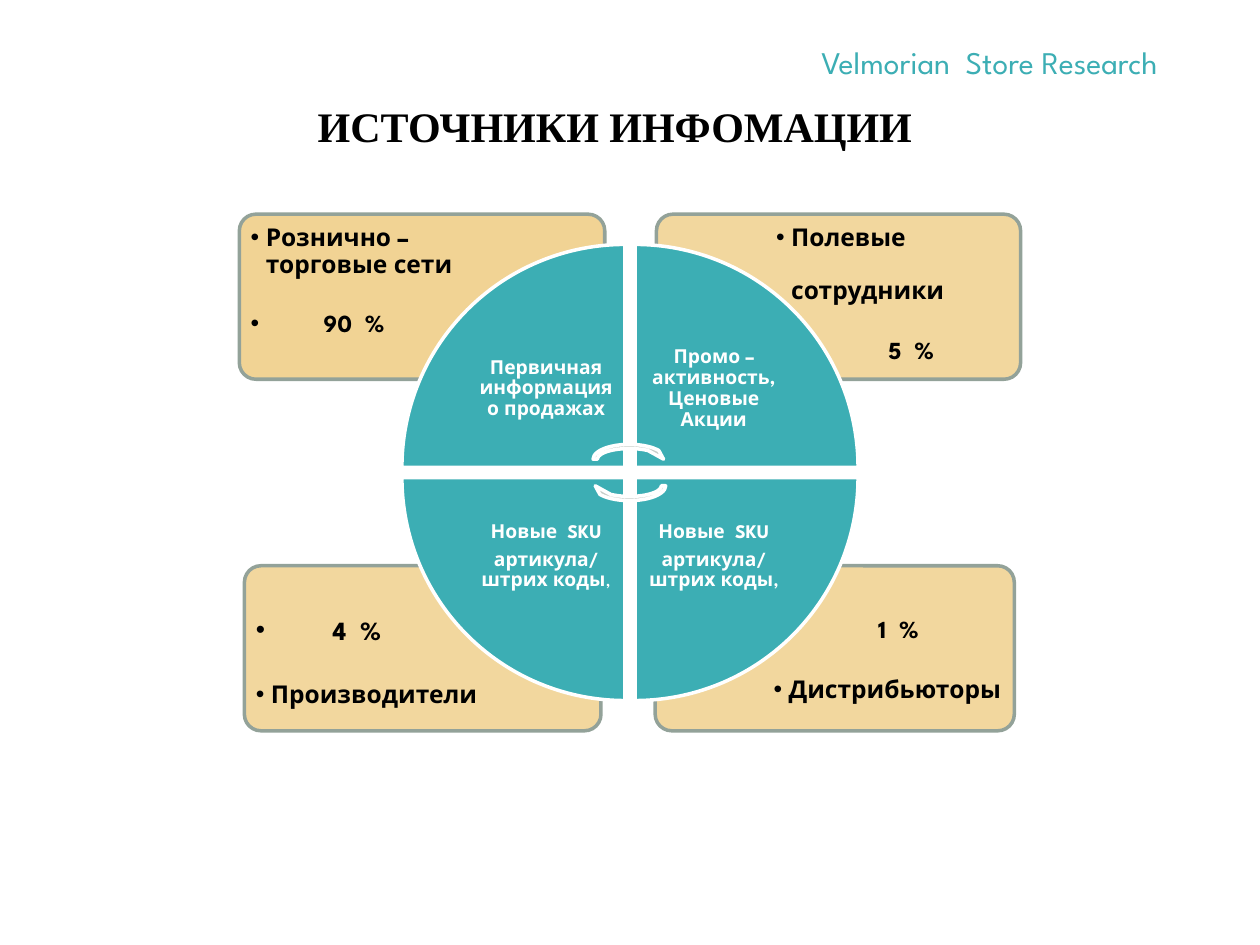
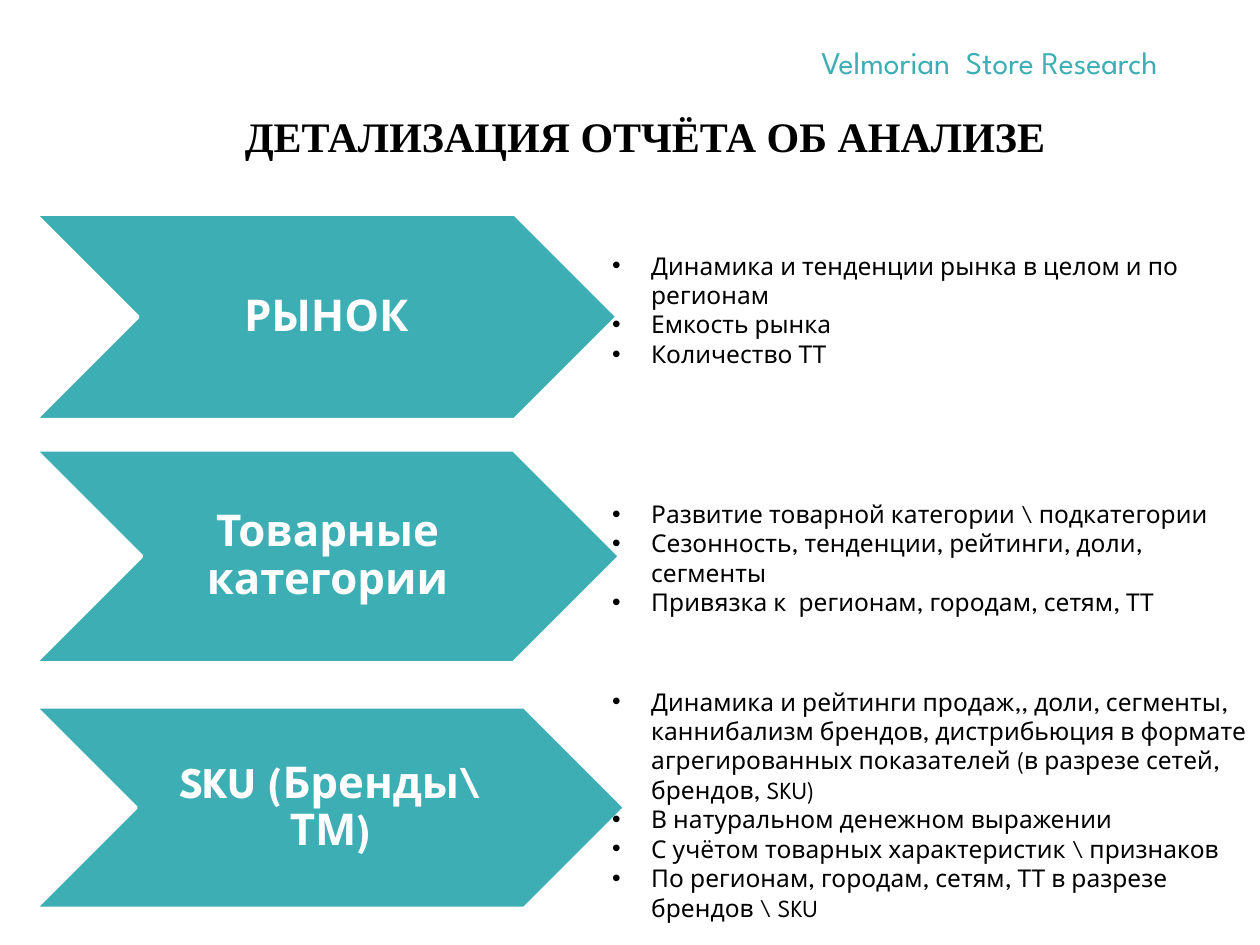
from dataclasses import dataclass
from lxml.etree import SubElement as Sub
from pptx import Presentation
from pptx.dml.color import RGBColor as Rgb
from pptx.enum.shapes import MSO_SHAPE as Kind
from pptx.enum.text import MSO_ANCHOR as Anchor, PP_ALIGN as Align
from pptx.oxml.ns import qn
from pptx.util import Inches, Pt


@dataclass(frozen=True)
class Theme:
    teal: str = "3CAEB4"
    sand: str = "F1D394"
    edge: str = "93A299"
    gray: str = "C8CECA"
    white: str = "FFFFFF"
    black: str = "000000"
    serif: str = "Times New Roman"
    sans: str = "League Spartan"
    dots: str = "Arial"
    title: int = 24
    brand: int = 18
    big: int = 25
    share: int = 15
    body: int = 14
    wedge: int = 11
    small: int = 10


T = Theme()
BRAND = "Velmorian  Store Research"
HANG = 0.12

CARDS = [
    dict(box=(5.2, 4.49, 2.85, 1.31), text=(6.08, 4.84, 1.94, 0.93), alpha=90, lines=[
        ("1  %", T.body, 0.83, False, 0),
        ("Дистрибьюторы", T.body, HANG, True, 19)]),
    dict(box=(1.94, 4.49, 2.83, 1.31), text=(1.97, 4.84, 1.92, 0.93), alpha=90, lines=[
        ("4  %", T.share, 0.61, True, 0),
        ("Производители", T.body, HANG, True, 21)]),
    dict(box=(5.21, 1.7, 2.89, 1.31), text=(6.1, 1.73, 1.97, 0.93), alpha=90, lines=[
        ("Полевые", T.body, HANG, True, 0),
        ("сотрудники", T.body, HANG, False, 15),
        ("5  %", T.body, 0.89, False, 19)]),
    dict(box=(1.9, 1.7, 2.9, 1.31), text=(1.93, 1.73, 1.97, 0.93), alpha=100, lines=[
        ("Рознично – торговые сети", T.body, HANG, True, 0),
        ("90  %", T.body, 0.58, True, 19)]),
]

GOODS = "артикула/ штрих коды"
WEDGES = [
    [[("Первичная информация о продажах", T.wedge, True)]],
    [[("Промо – активность, Ценовые Акции", T.wedge, True)]],
    [[("Новые  SKU", T.wedge, True)], [(GOODS, T.wedge, True), (",", T.small, True)]],
    [[("Новые  SKU", T.wedge, True)], [(GOODS, T.wedge, True), (",", T.wedge, False)]],
]

LEVELS = [
    ("РЫНОК", (1.7, 4.62, 1.63), (1.94, 5.24, 1.04), [
        "Динамика и тенденции рынка в целом и по регионам",
        "Емкость рынка",
        "Количество ТТ"]),
    ("Товарные категории", (3.57, 4.64, 1.69), (3.91, 5.19, 1.04), [
        "Развитие товарной категории \\ подкатегории",
        "Сезонность, тенденции, рейтинги, доли, сегменты",
        "Привязка к  регионам, городам, сетям, ТТ"]),
    ("SKU (Бренды\\ ТМ)", (5.61, 4.68, 1.6), (5.4, 5.35, 1.99), [
        "Динамика и рейтинги продаж,, доли, сегменты, каннибализм брендов, "
        "дистрибьюция в формате агрегированных показателей (в разрезе сетей, брендов, SKU)",
        "В натуральном денежном выражении",
        "С учётом товарных характеристик \\ признаков",
        "По регионам, городам, сетям, ТТ в разрезе брендов \\ SKU"]),
]


def style(run, size, color, bold=False, face=T.sans):
    font = run.font
    font.name, font.size, font.bold = face, Pt(size), bold
    font.color.rgb = Rgb.from_string(color)


def inset(frame, side, top):
    frame.word_wrap = True
    frame.margin_left = frame.margin_right = Inches(side)
    frame.margin_top = frame.margin_bottom = Inches(top)


def textbox(slide, box, side=0.1, top=0.05):
    frame = slide.shapes.add_textbox(*map(Inches, box)).text_frame
    inset(frame, side, top)
    return frame


def shape(slide, kind, box, fill, line=T.white, turn=0, alpha=100):
    item = slide.shapes.add_shape(kind, *map(Inches, box))
    item.shadow.inherit = False
    item.rotation = turn
    item.fill.solid()
    item.fill.fore_color.rgb = Rgb.from_string(fill)
    if alpha < 100:
        tint = item.fill._xPr.find(qn("a:solidFill"))[0]
        Sub(tint, qn("a:alpha")).set("val", str(alpha * 1000))
    item.line.color.rgb = Rgb.from_string(line)
    item.line.width = Pt(2)
    return item


def paras(frame, count):
    frame.text = "\n" * (count - 1)
    return frame.paragraphs


def indent(para, left, dot):
    props = para._p.get_or_add_pPr()
    props.set("marL", str(Inches(left)))
    props.set("indent", str(-Inches(left) if dot else 0))
    if dot:
        Sub(props, qn("a:buFont")).set("typeface", T.dots)
        Sub(props, qn("a:buChar")).set("char", "•")


def start(deck, text, box):
    slide = deck.slides.add_slide(deck.slide_layouts[5])
    title = slide.shapes.title
    title.left, title.top, title.width, title.height = map(Inches, box)
    frame = title.text_frame
    frame.text = text
    frame.vertical_anchor = Anchor.MIDDLE
    para = frame.paragraphs[0]
    para.alignment = Align.CENTER
    style(para.runs[0], T.title, T.black, True, T.serif)
    brand = textbox(slide, (6.42, 0.29, 3.46, 0.4))
    brand.text = BRAND
    style(brand.paragraphs[0].runs[0], T.brand, T.teal)
    return slide


def card(slide, box, text, alpha, lines):
    back = shape(slide, Kind.ROUNDED_RECTANGLE, box, T.sand, T.edge, alpha=alpha)
    back.adjustments[0] = 0.1
    frame = textbox(slide, text, 0.06, 0.06)
    for para, (words, size, left, dot, gap) in zip(paras(frame, len(lines)), lines):
        para.text = words
        para.line_spacing = 0.9
        para.space_before = Pt(gap)
        indent(para, left, dot)
        style(para.runs[0], size, T.black, True)


def wheel(slide):
    size, inner = 1.77, 1.25
    for spot, parts in enumerate(WEDGES):
        right, low = spot in (1, 2), spot > 1
        left, top = 5.04 if right else 3.19, 3.79 if low else 1.94
        shape(slide, Kind.PIE_WEDGE, (left, top, size, size), T.teal, turn=90 * spot)
        shift = size - inner
        box = (left + shift * (not right), top + shift * (not low), inner, inner)
        frame = textbox(slide, box, 0.09, 0.09)
        frame.vertical_anchor = Anchor.MIDDLE
        for para, runs in zip(paras(frame, len(parts)), parts):
            para.alignment = Align.CENTER
            para.line_spacing = 0.9
            para.space_after = Pt(4)
            for words, points, bold in runs:
                run = para.add_run()
                run.text = words
                style(run, points, T.white, bold)
    for top, turn in ((3.51, 0), (3.72, 180)):
        shape(slide, Kind.CIRCULAR_ARROW, (4.69, top, 0.61, 0.27), T.gray, turn=turn)


def level(slide, name, arrow, notes, items):
    top, width, height = arrow
    frame = shape(slide, Kind.CHEVRON, (0.28, top, width, height), T.teal).text_frame
    inset(frame, 0.1, 0.02)
    frame.text = name
    frame.vertical_anchor = Anchor.MIDDLE
    para = frame.paragraphs[0]
    para.alignment = Align.CENTER
    para.line_spacing = 0.9
    style(para.runs[0], T.big, T.white, True)
    frame = textbox(slide, (4.76, *notes))
    for para, words in zip(paras(frame, len(items)), items):
        para.text = words
        indent(para, 0.31, True)
        style(para.runs[0], T.body, T.black)


def main():
    deck = Presentation()
    deck.slide_width, deck.slide_height = Inches(10), Inches(7.5)
    slide = start(deck, "ИСТОЧНИКИ ИНФОМАЦИИ", (0, 0.69, 9.76, 0.62))
    for item in CARDS:
        card(slide, **item)
    wheel(slide)
    slide = start(deck, "ДЕТАЛИЗАЦИЯ ОТЧЁТА ОБ АНАЛИЗЕ", (0.24, 0.69, 9.76, 0.78))
    for item in LEVELS:
        level(slide, *item)
    deck.save("out.pptx")


if __name__ == "__main__":
    main()
